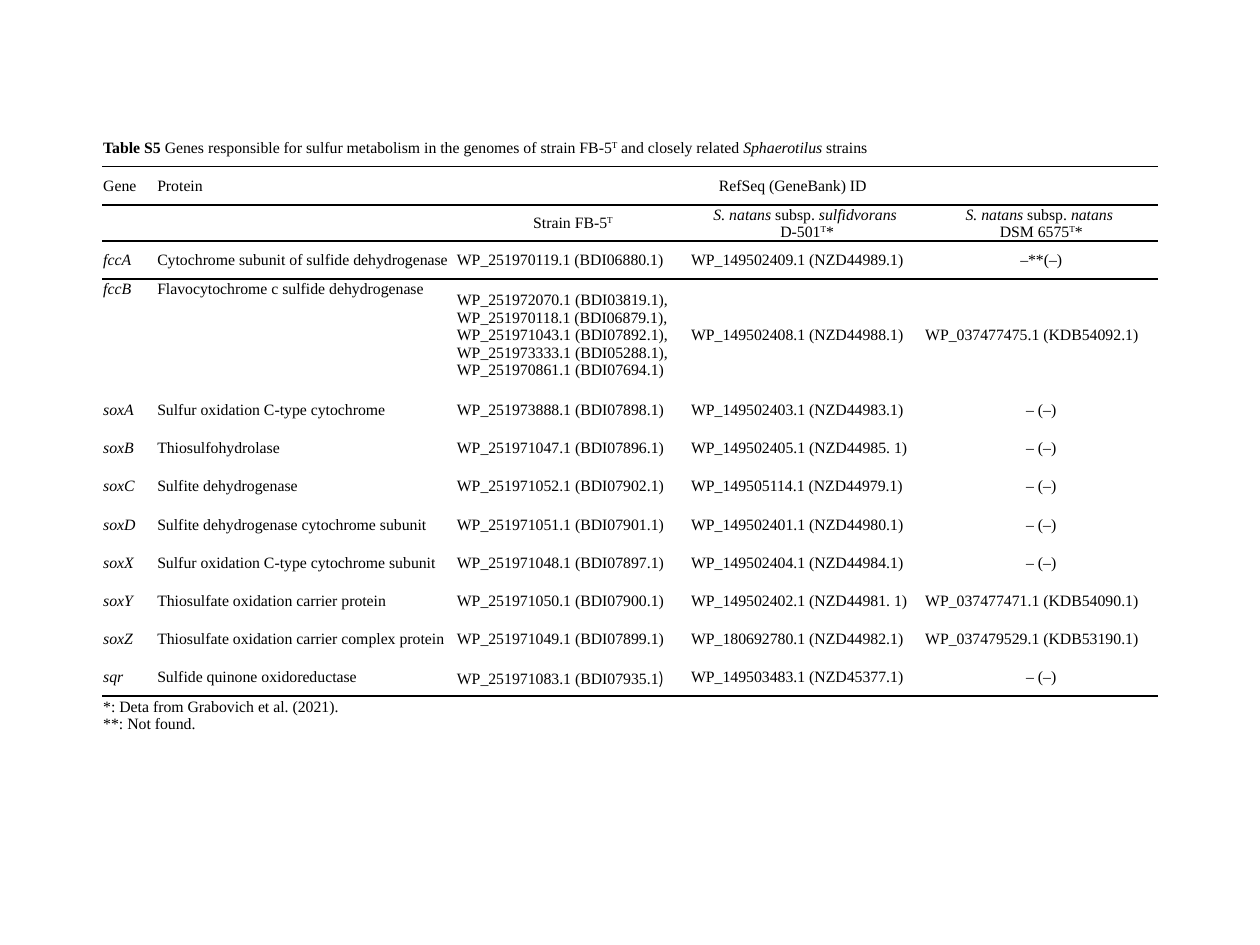
from dataclasses import dataclass
from typing import NamedTuple

from lxml import etree
from pptx import Presentation
from pptx.dml.color import RGBColor
from pptx.enum.text import MSO_ANCHOR, PP_ALIGN
from pptx.oxml.ns import qn
from pptx.table import Table, _Cell
from pptx.util import Cm, Pt

LEFT, CENTER = PP_ALIGN.LEFT, PP_ALIGN.CENTER
TOP, MIDDLE = MSO_ANCHOR.TOP, MSO_ANCHOR.MIDDLE
NO_STYLE = "{2D5ABB26-0587-4C30-8999-92F81FD0307C}"


@dataclass(frozen=True)
class Theme:
    font: str = "Times New Roman"
    wide_font: str = "Noto Sans CJK JP"
    size: float = 9
    ink: str = "000000"
    paper: str = "FFFFFF"
    rule: float = 1
    superscript: int = 30000


THEME = Theme()


class Span(NamedTuple):
    text: str
    bold: bool = False
    italic: bool = False
    raised: bool = False
    font: str = THEME.font


class GeneRow(NamedTuple):
    gene: str
    protein: str
    fb5: list[list[Span]]
    d501: str
    dsm6575: str


Paragraphs = list[list[Span]]


def plain(text: str) -> Paragraphs:
    return [[Span(text)]]


def subspecies(name: str, strain: str) -> Paragraphs:
    return [
        [Span("S. natans ", italic=True), Span("subsp. "), Span(f"{name} ", italic=True)],
        [Span(strain), Span("T", raised=True), Span("*")],
    ]


ABSENT = "‒ (‒)"
GENES = [
    GeneRow("fccA", "Cytochrome subunit of sulfide dehydrogenase",
            plain("WP_251970119.1 (BDI06880.1)"), "WP_149502409.1 (NZD44989.1)", "‒**(‒)"),
    GeneRow("fccB", "Flavocytochrome c sulfide dehydrogenase",
            plain("WP_251972070.1 (BDI03819.1), WP_251970118.1 (BDI06879.1), "
                  "WP_251971043.1 (BDI07892.1), WP_251973333.1 (BDI05288.1),")
            + plain("WP_251970861.1 (BDI07694.1)"),
            "WP_149502408.1 (NZD44988.1)", "WP_037477475.1 (KDB54092.1)"),
    GeneRow("soxA", "Sulfur oxidation C-type cytochrome",
            plain("WP_251973888.1 (BDI07898.1)"), "WP_149502403.1 (NZD44983.1)", ABSENT),
    GeneRow("soxB", "Thiosulfohydrolase",
            plain("WP_251971047.1 (BDI07896.1)"), "WP_149502405.1 (NZD44985. 1)", ABSENT),
    GeneRow("soxC", "Sulfite dehydrogenase",
            plain("WP_251971052.1 (BDI07902.1)"), "WP_149505114.1 (NZD44979.1)", ABSENT),
    GeneRow("soxD", "Sulfite dehydrogenase cytochrome subunit",
            plain("WP_251971051.1 (BDI07901.1)"), "WP_149502401.1 (NZD44980.1)", ABSENT),
    GeneRow("soxX", "Sulfur oxidation C-type cytochrome subunit",
            plain("WP_251971048.1 (BDI07897.1)"), "WP_149502404.1 (NZD44984.1)", ABSENT),
    GeneRow("soxY", "Thiosulfate oxidation carrier protein",
            plain("WP_251971050.1 (BDI07900.1)"), "WP_149502402.1 (NZD44981. 1)",
            "WP_037477471.1 (KDB54090.1)"),
    GeneRow("soxZ", "Thiosulfate oxidation carrier complex protein",
            plain("WP_251971049.1 (BDI07899.1)"), "WP_180692780.1 (NZD44982.1)",
            "WP_037479529.1 (KDB53190.1)"),
    GeneRow("sqr", "Sulfide quinone oxidoreductase",
            [[Span("WP_251971083.1 (BDI07935.1"), Span(")", font=THEME.wide_font)]],
            "WP_149503483.1 (NZD45377.1)", ABSENT),
]
TITLE = [[
    Span("Table S5", bold=True),
    Span(" Genes responsible for sulfur metabolism in the genomes of strain FB-5"),
    Span("T", raised=True), Span(" and closely related "),
    Span("Sphaerotilus ", italic=True), Span("strains"),
]]
FOOTNOTES = plain("*: Deta from Grabovich et al. (2021).") + plain("**: Not found.")

COLUMN_WIDTHS = [1.09, 5.46, 0.58, 4.72, 4.72, 4.72]
ROW_HEIGHT, STRAIN_HEIGHT, FCCB_HEIGHT = 0.77, 0.72, 2.25
TITLE_ROW, HEADER_ROW, STRAIN_ROW, FIRST_GENE_ROW = range(4)
NOTE_ROW = FIRST_GENE_ROW + len(GENES)
ROW_HEIGHTS = [ROW_HEIGHT] * (NOTE_ROW + 1)
ROW_HEIGHTS[STRAIN_ROW] = STRAIN_HEIGHT
ROW_HEIGHTS[FIRST_GENE_ROW + 1] = FCCB_HEIGHT


def write(cell: _Cell, paragraphs: Paragraphs, align: PP_ALIGN = LEFT) -> None:
    frame = cell.text_frame
    for index, spans in enumerate(paragraphs):
        para = frame.add_paragraph() if index else frame.paragraphs[0]
        para.alignment = align
        for span in spans:
            run = para.add_run()
            run.text = span.text
            run.font.name = span.font
            run.font.size = Pt(THEME.size)
            run.font.bold = span.bold
            run.font.italic = span.italic
            run.font.color.rgb = RGBColor.from_string(THEME.ink)
            if span.raised:
                run.font._element.set("baseline", str(THEME.superscript))


def prepare(cell: _Cell) -> None:
    """Give a cell its insets and fill, and keep it low while it is empty."""
    cell.margin_left = cell.margin_right = cell.margin_top = Cm(0.02)
    cell.margin_bottom = 0
    cell.vertical_anchor = MIDDLE
    cell.fill.solid()
    cell.fill.fore_color.rgb = RGBColor.from_string(THEME.paper)
    for para in cell.text_frame.paragraphs:
        if not para.runs:
            end = etree.SubElement(para._p, qn("a:endParaRPr"))
            end.set("sz", str(int(THEME.size * 100)))


def add_border(cell: _Cell, side: str) -> None:
    properties = cell._tc.get_or_add_tcPr()
    line = etree.Element(qn(f"a:{side}"), w=str(Pt(THEME.rule)))
    fill = etree.SubElement(line, qn("a:solidFill"))
    etree.SubElement(fill, qn("a:srgbClr"), val=THEME.ink)
    borders = [child for child in properties if child.tag in (qn("a:lnT"), qn("a:lnB"))]
    properties.insert(len(borders), line)


def rule_below(table: Table, row: int) -> None:
    for column in range(len(COLUMN_WIDTHS)):
        add_border(table.cell(row, column), "lnB")
        add_border(table.cell(row + 1, column), "lnT")


def merge(table: Table, row: int, first: int, last: int) -> None:
    table.cell(row, first).merge(table.cell(row, last))


def write_gene(table: Table, row: int, entry: GeneRow) -> None:
    last_align = CENTER if entry.dsm6575.startswith("‒") else LEFT
    write(table.cell(row, 0), [[Span(entry.gene, italic=True)]])
    write(table.cell(row, 1), plain(entry.protein))
    write(table.cell(row, 3), entry.fb5)
    write(table.cell(row, 4), plain(entry.d501))
    write(table.cell(row, 5), plain(entry.dsm6575), last_align)


def add_gene_table(slide) -> None:
    frame = slide.shapes.add_table(len(ROW_HEIGHTS), len(COLUMN_WIDTHS), Cm(2.06), Cm(2.59),
                                   Cm(sum(COLUMN_WIDTHS)), Cm(sum(ROW_HEIGHTS)))
    table = frame.table
    table.first_row = table.horz_banding = False
    table._tbl.tblPr.find(qn("a:tableStyleId")).text = NO_STYLE
    for column, width in zip(table.columns, COLUMN_WIDTHS):
        column.width = Cm(width)
    for row, height in zip(table.rows, ROW_HEIGHTS):
        row.height = Cm(height)

    for row in (TITLE_ROW, NOTE_ROW):
        merge(table, row, 0, 5)
    merge(table, HEADER_ROW, 2, 5)
    for row in range(STRAIN_ROW, NOTE_ROW):
        merge(table, row, 1, 2)

    write(table.cell(TITLE_ROW, 0), TITLE)
    write(table.cell(HEADER_ROW, 0), plain("Gene"))
    write(table.cell(HEADER_ROW, 1), plain("Protein"))
    write(table.cell(HEADER_ROW, 2), plain("RefSeq (GeneBank) ID"), CENTER)
    write(table.cell(STRAIN_ROW, 3), [[Span("Strain FB-5"), Span("T", raised=True)]], CENTER)
    write(table.cell(STRAIN_ROW, 4), subspecies("sulfidvorans", "D-501"), CENTER)
    write(table.cell(STRAIN_ROW, 5), subspecies("natans", "DSM 6575"), CENTER)
    for row, entry in enumerate(GENES, FIRST_GENE_ROW):
        write_gene(table, row, entry)
    write(table.cell(NOTE_ROW, 0), FOOTNOTES)

    for cell in table.iter_cells():
        prepare(cell)
    for column in (0, 1):
        table.cell(FIRST_GENE_ROW + 1, column).vertical_anchor = TOP
    for row in (TITLE_ROW, HEADER_ROW, STRAIN_ROW, NOTE_ROW - 1):
        rule_below(table, row)


def main() -> None:
    deck = Presentation()
    deck.slide_width, deck.slide_height = Cm(25.4), Cm(19.05)
    add_gene_table(deck.slides.add_slide(deck.slide_layouts[6]))
    deck.save("out.pptx")


if __name__ == "__main__":
    main()
